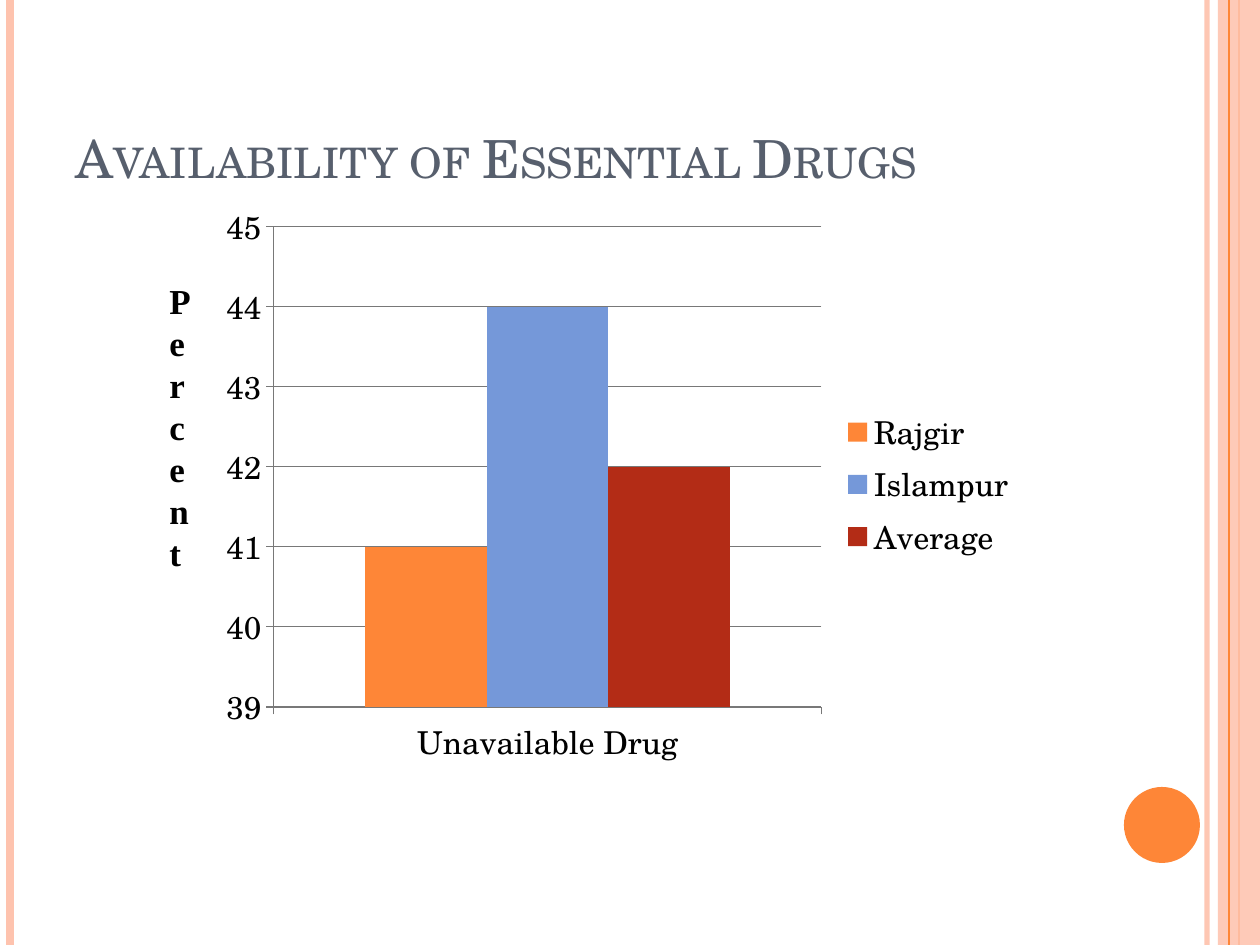
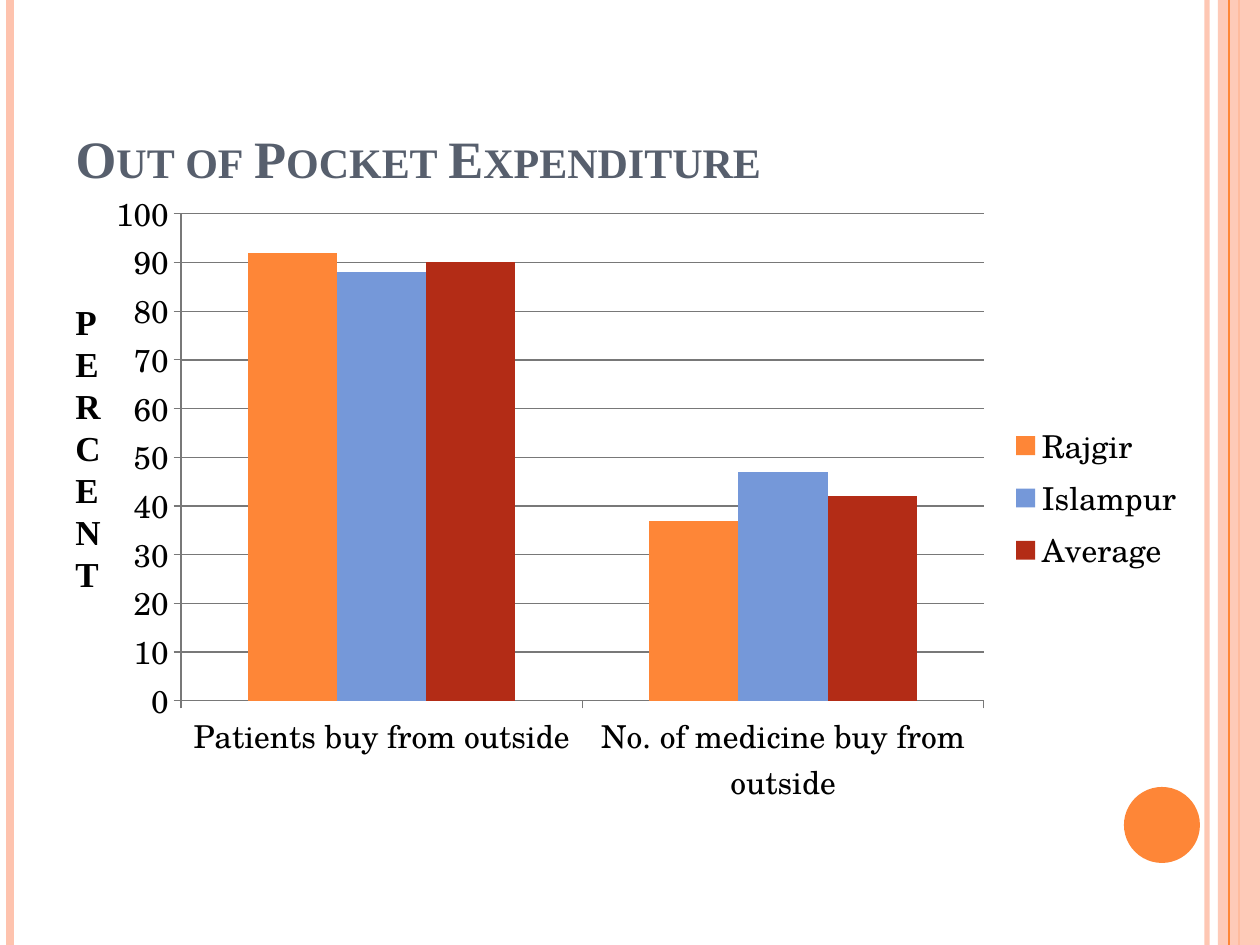
"""Build two slides of clustered column charts on drug supply and spending."""
from lxml.etree import SubElement
from pptx import Presentation
from pptx.chart.data import CategoryChartData
from pptx.dml.color import RGBColor
from pptx.enum.chart import XL_CHART_TYPE as CHART, XL_LEGEND_POSITION as LEGEND, XL_TICK_MARK as TICK
from pptx.enum.shapes import MSO_CONNECTOR as CONN, MSO_SHAPE as SHAPE
from pptx.enum.text import MSO_ANCHOR as ANCHOR, MSO_AUTO_SIZE as AUTO, PP_ALIGN as ALIGN
from pptx.oxml.ns import qn
from pptx.util import Emu, Pt

WIDTH, HEIGHT = 1260, 945
SERIF, TIMES = "TeX Gyre Schola", "Times New Roman"
PEACH, ORANGE, SLATE, BLACK, GREY = "FEC3AE", "FE8637", "575F6D", "000000", "787878"
SERIES = [("Rajgir", ORANGE), ("Islampur", "7598D9"), ("Average", "B32C16")]
TITLE_BOX = (63, 38, 1029, 157)

SLIDES = [
    dict(title="Availability of Essential Drugs", title_font=SERIF, title_bold=False,
         chart_box=(210, 192, 819, 585), scale=(39, 45, 1),
         categories=["Unavailable Drug"], values=[[41], [44], [42]],
         label="Percent", label_box=(157, 273, 53, 310)),
    dict(title="Out of Pocket Expenditure", title_font=TIMES, title_bold=True,
         chart_box=(94, 178, 1103, 640), scale=(0, 100, 10),
         categories=["Patients buy from outside", "No. of medicine buy from outside"],
         values=[[92, 37], [88, 47], [90, 42]],
         label="PERCENT", label_box=(63, 294, 42, 310)),
]

BANDS = [
    ("line", 1207, 3, PEACH, 93),
    ("line", 10, 4.5, PEACH, 100),
    ("line", 1239, 1.5, ORANGE, 100),
    (SHAPE.RECTANGLE, (1218, 0, 42, HEIGHT), None, PEACH, 87),
    ("line", 1229, 0.75, ORANGE, 100),
    (SHAPE.OVAL, (1124, 787, 76, 76), None, ORANGE, 100),
]


def px(*lengths):
    return [Emu(round(n * 914400 / 126)) for n in lengths]


def rgb(code):
    return RGBColor.from_string(code)


def set_font(font, name, size, color, bold=False):
    font.name, font.size, font.bold = name, Pt(size), bold
    font.color.rgb = rgb(color)


def set_alpha(s, percent):
    for clr in s.element.spPr.iter(qn("a:srgbClr")):
        SubElement(clr, qn("a:alpha"), val=str(percent * 1000))


def add_bands(slide, layout):
    for number, (kind, place, width, color, alpha) in enumerate(BANDS, 100):
        if kind == "line":
            s = slide.shapes.add_connector(CONN.STRAIGHT, *px(place, 0, place, HEIGHT))
            s.line.width, s.line.color.rgb = Pt(width), rgb(color)
            SubElement(s.element.spPr, qn("a:effectLst"))
        else:
            s = slide.shapes.add_shape(kind, *px(*place))
            s.shadow.inherit = False
            s.fill.solid()
            s.fill.fore_color.rgb = rgb(color)
            s.line.fill.background()
        if alpha < 100:
            set_alpha(s, alpha)
        next(s.element.iter(qn("p:cNvPr"))).set("id", str(number))
        layout.shapes.element.append(s.element)


def add_title(slide, text, font, bold):
    s = slide.shapes.title
    s.left, s.top, s.width, s.height = px(*TITLE_BOX)
    tf = s.text_frame
    tf.text, tf.vertical_anchor, tf.auto_size = text, ANCHOR.BOTTOM, AUTO.NONE
    p = tf.paragraphs[0]
    p.alignment = ALIGN.LEFT
    set_font(p.font, font, 30, SLATE, bold)
    next(s.element.iter(qn("a:defRPr"))).set("cap", "small")


def add_column_chart(slide, box, categories, values, scale):
    data = CategoryChartData()
    data.categories = categories
    for (name, _), numbers in zip(SERIES, values):
        data.add_series(name, numbers)
    chart = slide.shapes.add_chart(CHART.COLUMN_CLUSTERED, *px(*box), data).chart
    set_font(chart.font, SERIF, 18, BLACK)
    chart.has_title = False
    chart.has_legend = True
    chart.legend.position = LEGEND.RIGHT
    chart.legend.include_in_layout = False
    plot = chart.plots[0]
    plot.vary_by_categories, plot.gap_width, plot.overlap = False, 150, 0
    for series, (_, color) in zip(plot.series, SERIES):
        series.format.fill.solid()
        series.format.fill.fore_color.rgb = rgb(color)
    axis = chart.value_axis
    axis.minimum_scale, axis.maximum_scale, axis.major_unit = scale
    axis.tick_labels.number_format = "General"
    axis.tick_labels.number_format_is_linked = False
    for part in (axis, chart.category_axis):
        part.major_tick_mark, part.minor_tick_mark = TICK.OUTSIDE, TICK.NONE
    for part in (axis, chart.category_axis, axis.major_gridlines):
        part.format.line.color.rgb = rgb(GREY)
        part.format.line.width = Pt(0.75)


def add_axis_label(slide, text, box):
    tf = slide.shapes.add_textbox(*px(*box)).text_frame
    tf.word_wrap, tf.auto_size, tf.text = True, AUTO.SHAPE_TO_FIT_TEXT, text
    set_font(tf.paragraphs[0].font, TIMES, 20, BLACK, True)


def main():
    prs = Presentation()
    prs.slide_width, prs.slide_height = px(WIDTH, HEIGHT)
    layout = prs.slide_layouts.get_by_name("Title Only")
    for i, content in enumerate(SLIDES):
        slide = prs.slides.add_slide(layout)
        if i == 0:
            add_bands(slide, layout)
        add_title(slide, content["title"], content["title_font"], content["title_bold"])
        add_column_chart(slide, content["chart_box"], content["categories"],
                         content["values"], content["scale"])
        add_axis_label(slide, content["label"], content["label_box"])
    prs.save("out.pptx")


if __name__ == "__main__":
    main()
